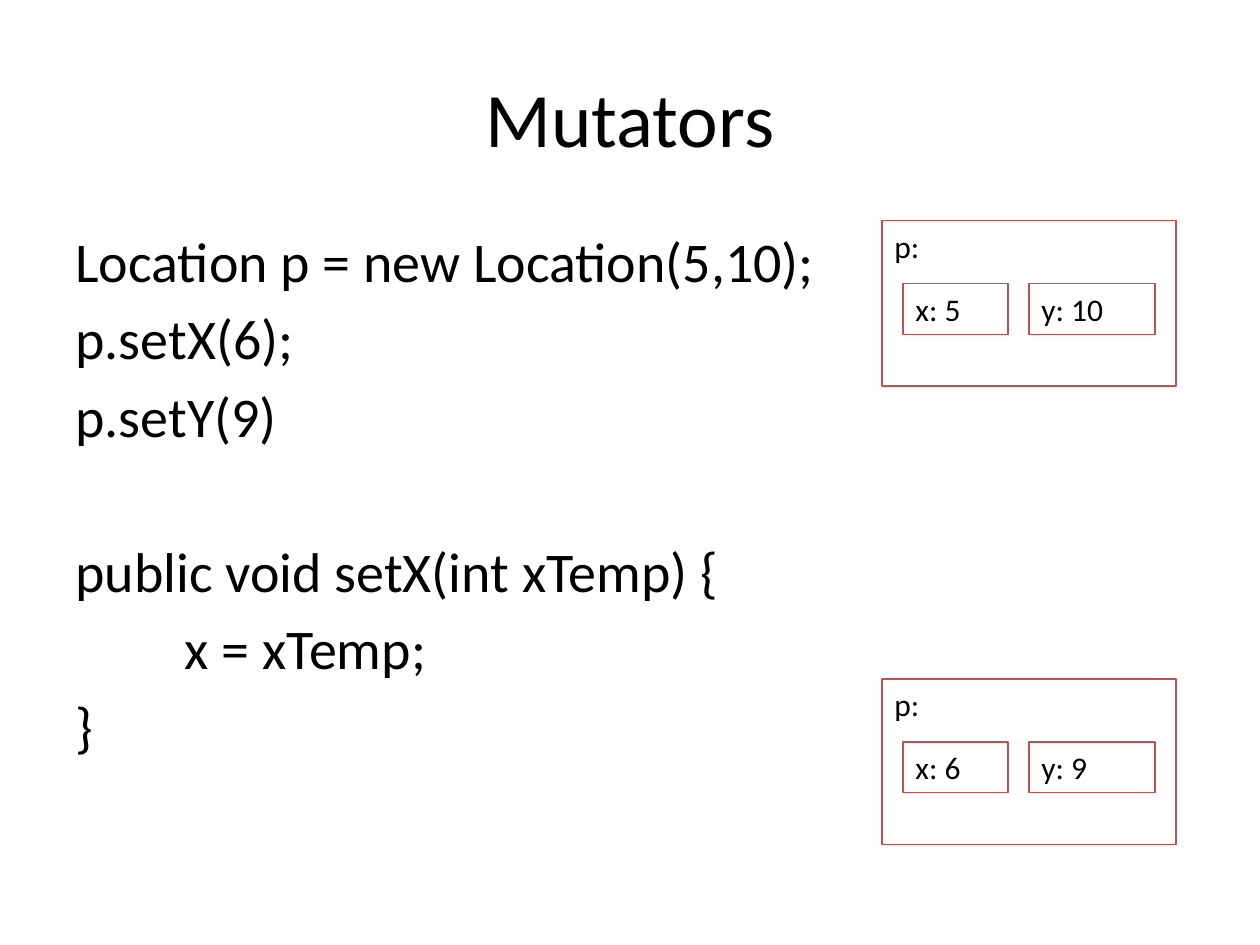
from dataclasses import dataclass

from pptx import Presentation
from pptx.dml.color import RGBColor
from pptx.enum.shapes import MSO_SHAPE
from pptx.enum.text import MSO_ANCHOR, PP_ALIGN
from pptx.slide import Slide
from pptx.text.text import TextFrame
from pptx.util import Inches, Pt

RECTANGLE = MSO_SHAPE.RECTANGLE
TOP, MIDDLE = MSO_ANCHOR.TOP, MSO_ANCHOR.MIDDLE
LEFT, CENTER = PP_ALIGN.LEFT, PP_ALIGN.CENTER

BLACK = RGBColor(0x00, 0x00, 0x00)
RED = RGBColor(0xC0, 0x50, 0x4D)
FONT = "Calibri"

WIDTH, HEIGHT = Inches(10), Inches(7.5)
COLUMN, ROW = WIDTH / 60, HEIGHT / 45
LINE_GAP = 5.7
SECTION_GAP = 50.5


@dataclass(frozen=True)
class Area:
    column: float
    row: float
    columns: float
    rows: float

    def emu(self) -> tuple[int, int, int, int]:
        return (
            round(self.column * COLUMN),
            round(self.row * ROW),
            round(self.columns * COLUMN),
            round(self.rows * ROW),
        )


@dataclass(frozen=True)
class CodeLine:
    text: str
    gap: float = LINE_GAP
    indent: float = 0


@dataclass(frozen=True)
class LocationState:
    row: float
    x: int
    y: int


CODE = (
    CodeLine("Location p = new Location(5,10);"),
    CodeLine("p.setX(6);"),
    CodeLine("p.setY(9)"),
    CodeLine("public void setX(int xTemp) {", gap=SECTION_GAP),
    CodeLine("x = xTemp;", indent=0.87),
    CodeLine("}"),
)
STATES = (LocationState(32.33, 6, 9), LocationState(10.5, 5, 10))


def write_lines(
    frame: TextFrame,
    lines: tuple[CodeLine, ...],
    size: float,
    align: PP_ALIGN = LEFT,
    anchor: MSO_ANCHOR = TOP,
) -> None:
    frame.word_wrap = True
    frame.vertical_anchor = anchor
    for index, line in enumerate(lines):
        paragraph = frame.add_paragraph() if index else frame.paragraphs[0]
        paragraph.alignment = align
        paragraph.space_before = Pt(line.gap)
        if line.indent:
            properties = paragraph._p.get_or_add_pPr()
            properties.set("marL", str(Inches(line.indent)))
        run = paragraph.add_run()
        run.text = line.text
        run.font.name = FONT
        run.font.size = Pt(size)
        run.font.color.rgb = BLACK


def draw_variable(slide: Slide, area: Area, label: str) -> None:
    box = slide.shapes.add_shape(RECTANGLE, *area.emu())
    box.shadow.inherit = False
    box.fill.background()
    box.line.color.rgb = RED
    box.line.width = Pt(0.75)
    write_lines(box.text_frame, (CodeLine(label, gap=0),), 18)


def draw_state(slide: Slide, state: LocationState) -> None:
    field_row = state.row + 3
    draw_variable(slide, Area(42, state.row, 14, 7.88), "p:")
    draw_variable(slide, Area(43, field_row, 5, 2.42), f"x: {state.x}")
    draw_variable(slide, Area(49, field_row, 6, 2.42), f"y: {state.y}")


def main() -> None:
    deck = Presentation()
    deck.slide_width, deck.slide_height = WIDTH, HEIGHT
    slide = deck.slides.add_slide(deck.slide_layouts[6])

    title = slide.shapes.add_textbox(*Area(3, 1.8, 54, 7.5).emu())
    heading = (CodeLine("Mutators", gap=0),)
    write_lines(title.text_frame, heading, 44, CENTER, MIDDLE)

    code = slide.shapes.add_textbox(*Area(3, 10.5, 54, 29.7).emu())
    write_lines(code.text_frame, CODE, 32)

    for state in STATES:
        draw_state(slide, state)

    deck.save("out.pptx")


if __name__ == "__main__":
    main()
